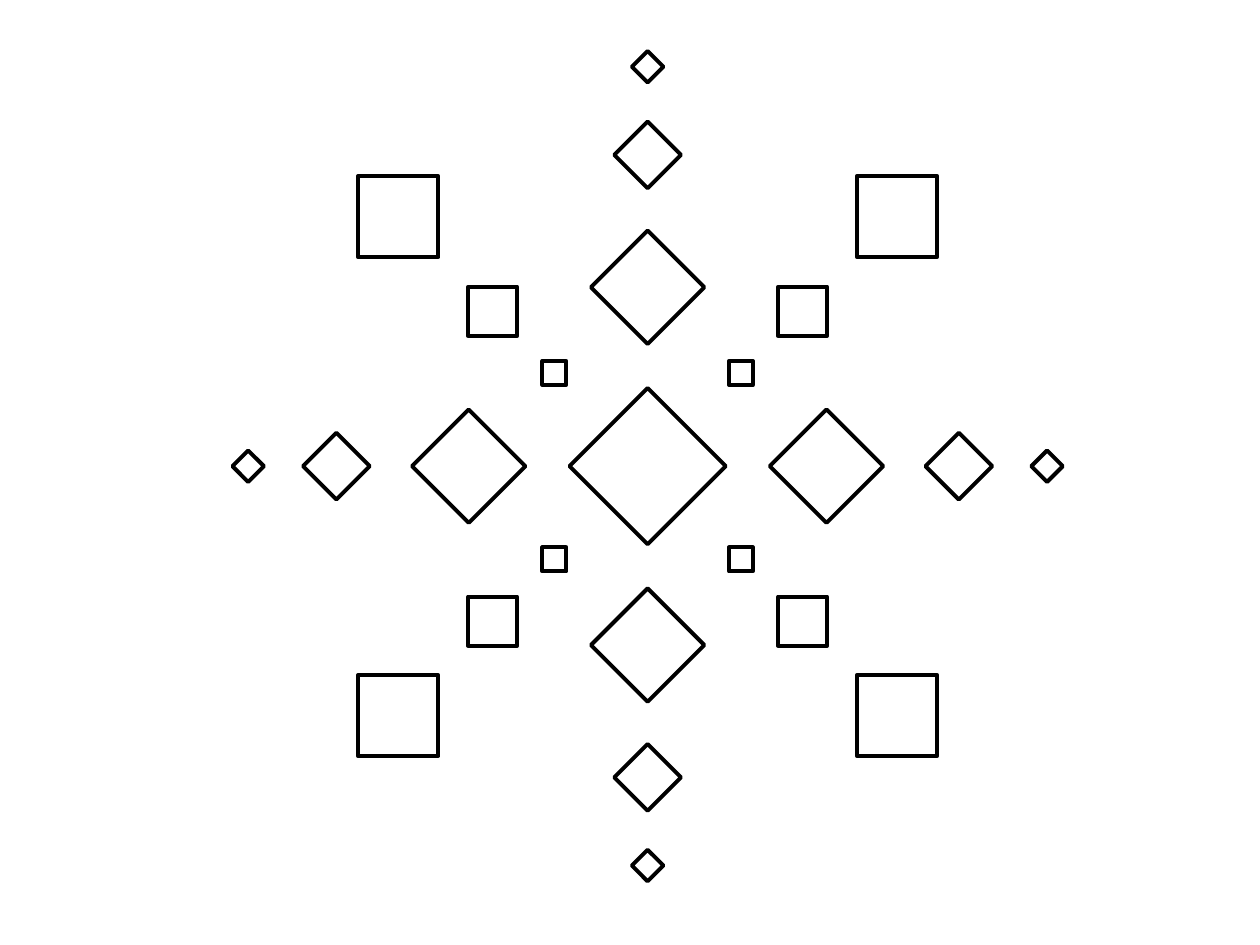
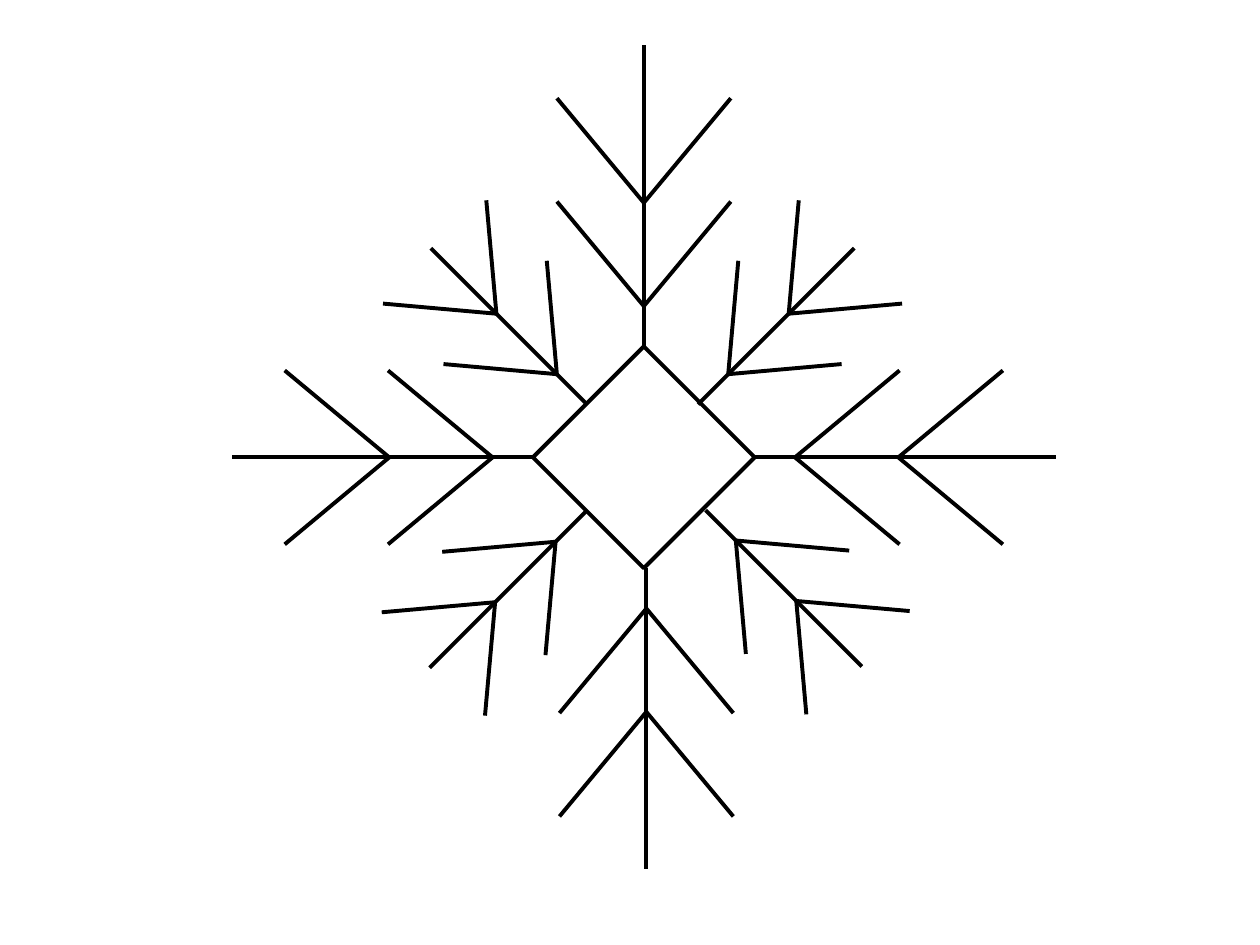
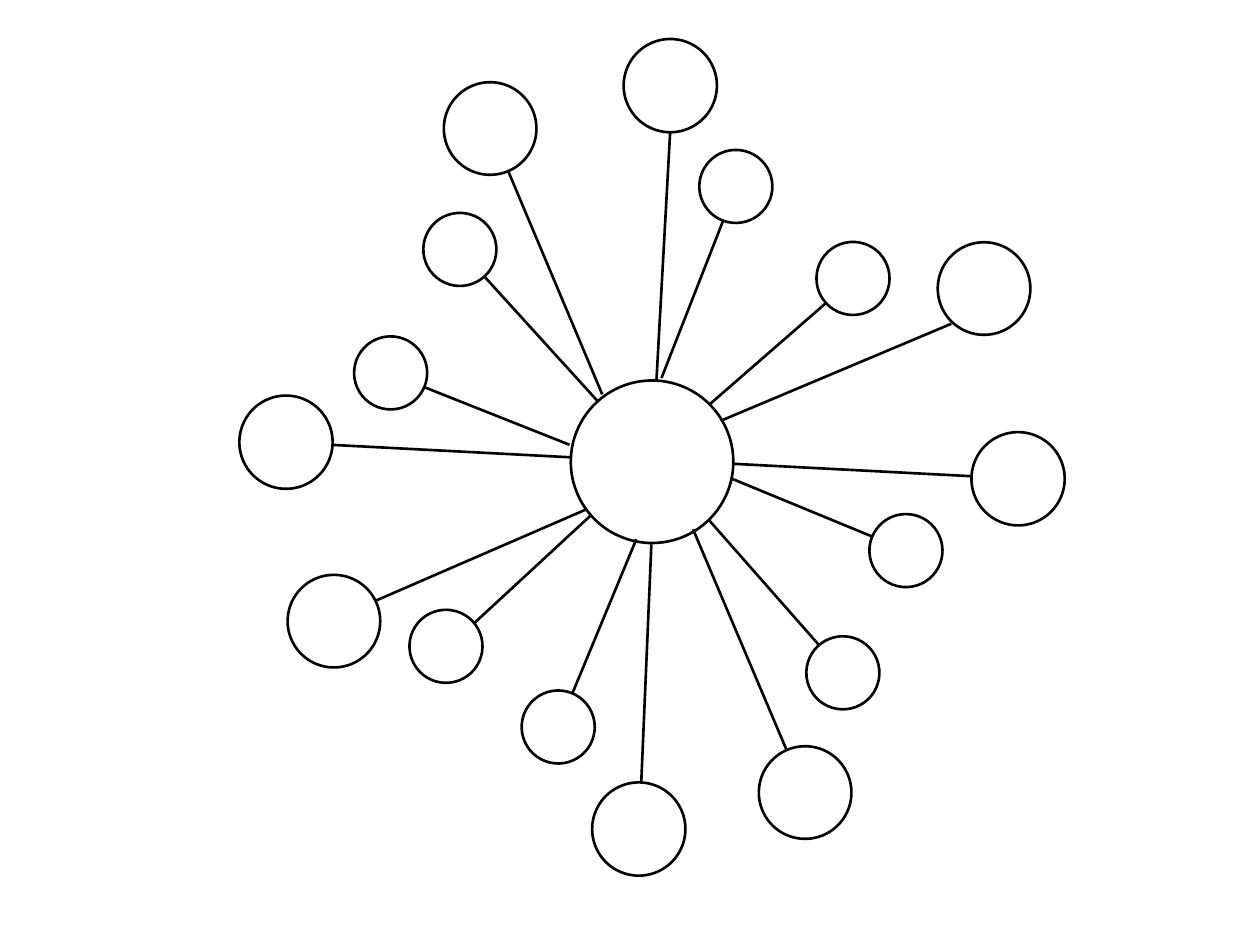
"""Build three snowflake outlines: diamonds and squares, branches, and circles."""
import dataclasses
import itertools
import typing

import lxml.etree
import pptx
import pptx.dml.color
import pptx.enum.shapes
import pptx.oxml.ns
import pptx.util

SLIDE_WIDTH = pptx.util.Inches(10)
SLIDE_HEIGHT = pptx.util.Inches(7.5)
COLUMNS = 100
CELL = SLIDE_WIDTH / COLUMNS
INK = "000000"
PAPER = "FFFFFF"
BOLD = 2.25
FINE = 1.5

Point = tuple[float, float]


class Ring(typing.NamedTuple):
    """Tiles of one size at one distance from the centre."""
    distance: float
    size: float


@dataclasses.dataclass(frozen=True)
class Branch:
    """Stem and chevrons, measured along and across an arm's axis."""
    start: float
    end: float
    apexes: tuple[float, float]
    reach: float
    spread: float


class Arm(typing.NamedTuple):
    """A branch placed at a hub and pointed along an axis."""
    branch: Branch
    hub: Point
    axis: Point


class Spoke(typing.NamedTuple):
    """A circle's centre and the two ends of the line to the hub."""
    node: Point
    outer: Point
    inner: Point


@dataclasses.dataclass(frozen=True)
class Wheel:
    """Spokes whose circles share a size and a turn."""
    size: float
    turn: float
    spokes: tuple[Spoke, ...]


AXES = ((0, -1), (1, 0), (0, 1), (-1, 0))
DIAGONALS = tuple(itertools.product((-1, 1), repeat=2))

TILE_CENTRE = (51.4, 37)
CENTRE_DIAMOND = 12.4
DIAMOND_RINGS = (Ring(14.2, 9), Ring(24.7, 5.3), Ring(31.7, 2.5))
SQUARE_RINGS = (Ring(19.8, 6.4), Ring(12.3, 3.9), Ring(7.4, 1.9))

BRANCH_CENTRE = (51.1, 36.3)
LONG = Branch(8.8, 32.7, (12, 20.2), 8.3, 6.9)
SHORT = Branch(4.5, 16.9, (6.9, 11.7), 4.9, 4.1)
ARMS = (
    Arm(LONG, BRANCH_CENTRE, (0, -1)),
    Arm(LONG, (51.3, 36.3), (0, 1)),
    Arm(LONG, BRANCH_CENTRE, (1, 0)),
    Arm(LONG, BRANCH_CENTRE, (-1, 0)),
    Arm(SHORT, (50.9, 36.6), (1, -1)),
    Arm(SHORT, (51, 36.1), (-1, 1)),
    Arm(SHORT, (51.5, 36), (1, 1)),
    Arm(SHORT, (51.1, 36.6), (-1, -1)),
)

WHEEL_CENTRE = (51.75, 36.65)
WHEEL_HUB = 12.9
HUB_TURN = 2.7
BACK_WHEELS = (
    Wheel(7.4, HUB_TURN, (
        Spoke((53.2, 6.8), (53.2, 10.3), (52.1, 30.2)),
        Spoke((80.8, 38), (77.2, 37.8), (58, 36.8)),
        Spoke((50.7, 65.8), (50.9, 62), (51.7, 43.2)),
        Spoke((22.7, 35.1), (26.2, 35.3), (45.4, 36.3)),
    )),
    Wheel(5.8, 316.8, (
        Spoke((67.7, 22.1), (65.5, 24.1), (56.2, 32.2)),
        Spoke((66.9, 53.4), (65, 51.2), (56.2, 41.2)),
        Spoke((35.4, 51.3), (37.7, 49.4), (46.9, 40.9)),
        Spoke((36.5, 19.8), (38.4, 21.9), (47.4, 31.8)),
    )),
)
FRONT_WHEELS = (
    Wheel(7.35, 66.4, (
        Spoke((78.1, 22.9), (75.5, 25.7), (57.2, 33.4)),
        Spoke((63.9, 62.9), (62.5, 59.7), (55, 42)),
        Spoke((26.5, 49.3), (29.3, 47.9), (46.6, 40.4)),
        Spoke((38.9, 10.2), (40.3, 13.5), (47.8, 31.3)),
    )),
    Wheel(5.8, 20.9, (
        Spoke((71.9, 43.7), (69.5, 42.7), (58.1, 38)),
        Spoke((44.3, 57.7), (45.4, 55.1), (50.5, 42.8)),
        Spoke((31, 29.6), (33.6, 30.7), (45.2, 35.3)),
        Spoke((58.4, 14.8), (57.4, 17.5), (52.5, 30)),
    )),
)


def cells(count: float) -> pptx.util.Emu:
    """Convert grid cells to a length."""
    return pptx.util.Emu(round(count * CELL))


def colour(code: str) -> pptx.dml.color.RGBColor:
    """Convert a hex string to a colour."""
    return pptx.dml.color.RGBColor.from_string(code)


def offset(origin: Point, axis: Point, along: float, across: float = 0) -> Point:
    """Move from an origin along an axis and across it."""
    return (origin[0] + along * axis[0] - across * axis[1],
            origin[1] + along * axis[1] + across * axis[0])


def set_line(shape: typing.Any, weight: float) -> None:
    """Give a shape or connector its dark line."""
    shape.line.color.rgb = colour(INK)
    shape.line.width = pptx.util.Pt(weight)


def set_style(shape: typing.Any, weight: float, filled: bool) -> None:
    """Set fill, line and no shadow on a shape."""
    shape.shadow.inherit = False
    if filled:
        shape.fill.solid()
        shape.fill.fore_color.rgb = colour(PAPER)
    else:
        shape.fill.background()
    set_line(shape, weight)


def draw_outline(group: typing.Any, points: typing.Sequence[Point],
                 closed: bool, filled: bool) -> None:
    """Draw a freeform through the given points."""
    first, *others = [(cells(x), cells(y)) for x, y in points]
    builder = group.shapes.build_freeform(*first)
    builder.add_line_segments(others, close=closed)
    set_style(builder.convert_to_shape(), BOLD, filled)


def draw_diamond(group: typing.Any, centre: Point, size: float, filled: bool) -> None:
    """Draw a diamond around its centre."""
    corners = [offset(centre, axis, size / 2) for axis in AXES]
    draw_outline(group, corners, closed=True, filled=filled)


def draw_preset(group: typing.Any, kind: typing.Any, centre: Point, size: float,
                weight: float, turn: float = 0) -> None:
    """Draw a square or circle around its centre."""
    left, top = (cells(place - size / 2) for place in centre)
    shape = group.shapes.add_shape(kind, left, top, cells(size), cells(size))
    shape.rotation = turn
    set_style(shape, weight, filled=True)


def draw_line(group: typing.Any, start: Point, end: Point, weight: float) -> None:
    """Draw a straight connector without a shadow."""
    connector = group.shapes.add_connector(
        pptx.enum.shapes.MSO_CONNECTOR.STRAIGHT, *map(cells, start + end))
    set_line(connector, weight)
    lxml.etree.SubElement(connector._element.spPr, pptx.oxml.ns.qn("a:effectLst"))


def draw_tiles(group: typing.Any) -> None:
    """Draw the snowflake of diamonds and squares."""
    draw_diamond(group, TILE_CENTRE, CENTRE_DIAMOND, filled=True)
    for axis, ring in itertools.product(AXES, DIAMOND_RINGS):
        draw_diamond(group, offset(TILE_CENTRE, axis, ring.distance), ring.size, filled=True)
    square = pptx.enum.shapes.MSO_SHAPE.RECTANGLE
    for axis, ring in itertools.product(DIAGONALS, SQUARE_RINGS):
        draw_preset(group, square, offset(TILE_CENTRE, axis, ring.distance), ring.size, BOLD)


def draw_branches(group: typing.Any) -> None:
    """Draw the snowflake of stems and chevrons."""
    draw_diamond(group, BRANCH_CENTRE, 2 * LONG.start, filled=False)
    for branch, hub, axis in ARMS:
        draw_line(group, offset(hub, axis, branch.start), offset(hub, axis, branch.end), BOLD)
        for apex in branch.apexes:
            tips = [offset(hub, axis, apex + branch.reach, side * branch.spread)
                    for side in (-1, 1)]
            chevron = (tips[0], offset(hub, axis, apex), tips[1])
            draw_outline(group, chevron, closed=False, filled=False)


def draw_spokes(group: typing.Any, wheels: tuple[Wheel, ...]) -> None:
    """Draw the lines of some wheels."""
    for wheel in wheels:
        for spoke in wheel.spokes:
            draw_line(group, spoke.inner, spoke.outer, FINE)


def draw_nodes(group: typing.Any, wheels: tuple[Wheel, ...]) -> None:
    """Draw the circles of some wheels."""
    circle = pptx.enum.shapes.MSO_SHAPE.OVAL
    for wheel in wheels:
        for spoke in wheel.spokes:
            draw_preset(group, circle, spoke.node, wheel.size, FINE, wheel.turn)


def draw_wheels(group: typing.Any) -> None:
    """Draw the snowflake of circles around a hub."""
    draw_spokes(group, BACK_WHEELS)
    draw_preset(group, pptx.enum.shapes.MSO_SHAPE.OVAL, WHEEL_CENTRE, WHEEL_HUB, FINE, HUB_TURN)
    draw_nodes(group, BACK_WHEELS)
    draw_spokes(group, FRONT_WHEELS)
    draw_nodes(group, FRONT_WHEELS)


def main() -> None:
    """Build and save the presentation."""
    presentation = pptx.Presentation()
    presentation.slide_width = SLIDE_WIDTH
    presentation.slide_height = SLIDE_HEIGHT
    blank = presentation.slide_layouts.get_by_name("Blank")
    for draw in (draw_tiles, draw_branches, draw_wheels):
        slide = presentation.slides.add_slide(blank)
        draw(slide.shapes.add_group_shape())
    presentation.save("out.pptx")


if __name__ == "__main__":
    main()
